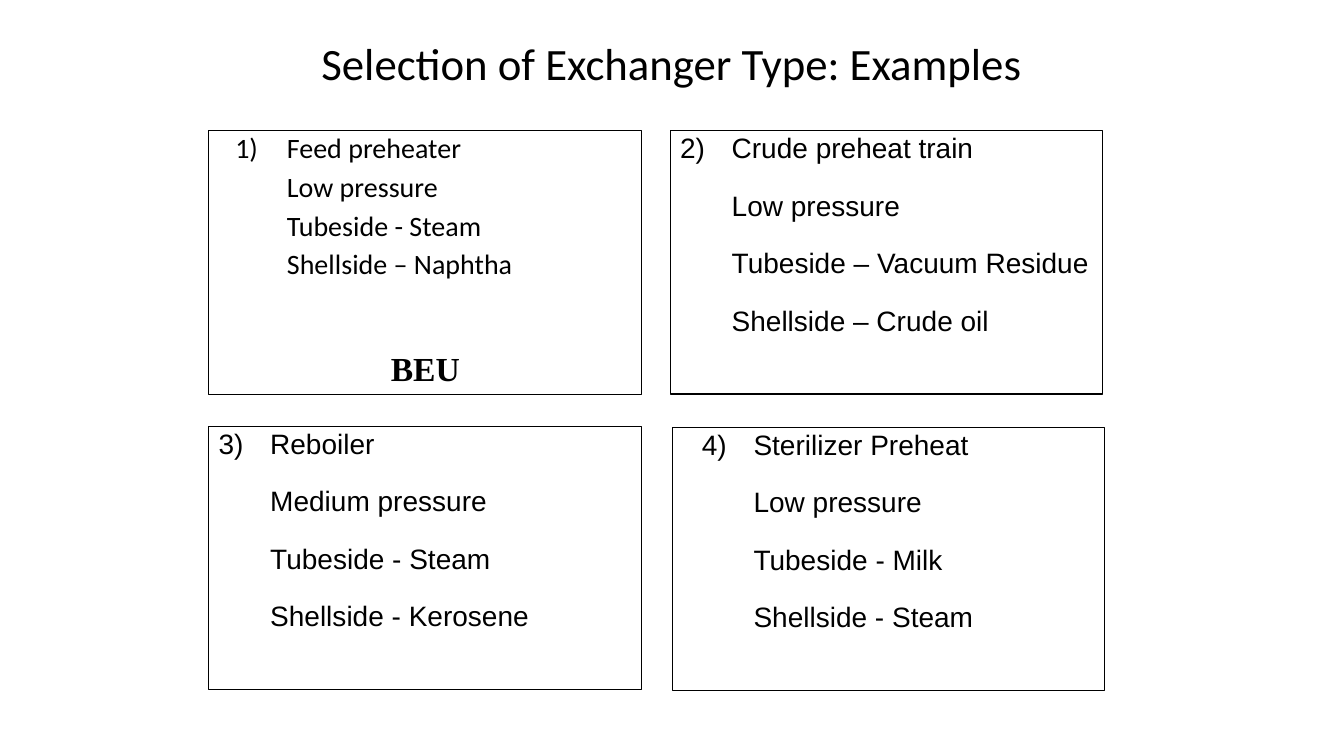
from lxml import etree
from pptx import Presentation
from pptx.dml.color import RGBColor
from pptx.enum.shapes import MSO_SHAPE
from pptx.enum.text import MSO_ANCHOR, MSO_AUTO_SIZE, PP_ALIGN
from pptx.oxml.ns import qn
from pptx.util import Cm, Pt

RECTANGLE = MSO_SHAPE.RECTANGLE
TOP = MSO_ANCHOR.TOP
NO_FIT = MSO_AUTO_SIZE.NONE
GROW = MSO_AUTO_SIZE.SHAPE_TO_FIT_TEXT
LEFT, CENTER = PP_ALIGN.LEFT, PP_ALIGN.CENTER

BLACK, WHITE = "000000", "FFFFFF"
CARD_WIDTH, CARD_HEIGHT = 10.9, 6.63
HANGING = 1.3
TITLE_FONT = {"name": "Calibri", "size": Pt(32), "bold": False}
ANSWER_FONT = {"name": "Times New Roman", "size": Pt(24), "bold": True}
CALIBRI_TEXT = {"name": "Calibri", "size": Pt(20), "bold": False}
ARIAL_TEXT = {"name": "Arial", "size": Pt(20), "bold": False}

FEED_PREHEATER = {
    "box": (5.26, 3.3, CARD_WIDTH, CARD_HEIGHT),
    "lines": ["1)\tFeed preheater", "\tLow pressure",
              "\tTubeside - Steam", "\tShellside – Naphtha"],
    "font": CALIBRI_TEXT, "gap": 3.6, "shift": 0.42,
}
ARIAL_CARDS = [
    {"box": (16.94, 10.77, CARD_WIDTH, CARD_HEIGHT),
     "lines": ["4)\tSterilizer Preheat", "\tLow pressure",
               "\tTubeside - Milk", "\tShellside - Steam"],
     "font": ARIAL_TEXT, "gap": 17, "shift": 0.5},
    {"box": (5.26, 10.74, CARD_WIDTH, CARD_HEIGHT),
     "lines": ["3)\tReboiler", "\tMedium pressure",
               "\tTubeside - Steam", "\tShellside - Kerosene"],
     "font": ARIAL_TEXT, "gap": 17, "shift": 0},
    {"box": (16.89, 3.3, CARD_WIDTH, CARD_HEIGHT),
     "lines": ["2)\tCrude preheat train", "\tLow pressure",
               "\tTubeside – Vacuum Residue", "\tShellside – Crude oil"],
     "font": ARIAL_TEXT, "gap": 17, "shift": 0},
]
ANSWER_SPACES = [(18.34, 8.81), (6.43, 16.15), (18.06, 16.23)]


def color(value):
    return RGBColor.from_string(value)


def apply(target, values):
    for name, value in values.items():
        setattr(target, name, value)


def place(shape, box):
    names = ("left", "top", "width", "height")
    apply(shape, {name: Cm(length) for name, length in zip(names, box)})


def write(para, text, font):
    span = para.add_run()
    span.text = text
    apply(span.font, font)
    span.font.color.rgb = color(BLACK)


def add_rectangle(page, box):
    shape = page.shapes.add_shape(RECTANGLE, *map(Cm, box))
    shape.shadow.inherit = False
    return shape


def fill_title(title, box):
    place(title, box)
    frame = title.text_frame
    apply(frame, {"vertical_anchor": TOP, "auto_size": NO_FIT, "word_wrap": True})
    frame.paragraphs[0].alignment = CENTER
    write(frame.paragraphs[0], "Selection of Exchanger Type: Examples", TITLE_FONT)


def fill_card(shape, card):
    place(shape, card["box"])
    shape.fill.background()
    shape.line.color.rgb = color(BLACK)
    shape.line.width = Pt(0.75)
    frame = shape.text_frame
    apply(frame, {
        "vertical_anchor": TOP, "auto_size": NO_FIT, "word_wrap": True,
        "margin_left": Cm(0.25), "margin_right": Cm(0.25),
        "margin_top": 0, "margin_bottom": 0,
    })
    for index, line in enumerate(card["lines"]):
        para = frame.add_paragraph() if index else frame.paragraphs[0]
        apply(para, {"alignment": LEFT, "space_after": Pt(0),
                     "space_before": Pt(card["gap"] if index else 0)})
        properties = para._p.get_or_add_pPr()
        properties.set("marL", str(Cm(HANGING + card["shift"])))
        properties.set("indent", str(-Cm(HANGING)))
        etree.SubElement(properties, qn("a:buNone"))
        write(para, line, card["font"])


def add_answer(page, box):
    frame = page.shapes.add_textbox(*map(Cm, box)).text_frame
    apply(frame, {"word_wrap": False, "auto_size": GROW})
    write(frame.paragraphs[0], "BEU", ANSWER_FONT)


def add_answer_space(page, box):
    space = add_rectangle(page, box)
    space.fill.solid()
    space.fill.fore_color.rgb = color(WHITE)
    space.line.fill.background()


def build_examples(page):
    title, body = page.placeholders
    fill_title(title, (1.69, 0.76, 30.48, 3.18))
    fill_card(body, FEED_PREHEATER)
    for card in ARIAL_CARDS:
        fill_card(add_rectangle(page, card["box"]), card)
    add_answer(page, (9.6, 8.64, 2.26, 1.27))
    for left, top in ANSWER_SPACES:
        add_answer_space(page, (left, top, 8.56, 1.02))


def main():
    deck = Presentation()
    apply(deck, {"slide_width": Cm(33.87), "slide_height": Cm(19.05)})
    build_examples(deck.slides.add_slide(deck.slide_layouts[1]))
    deck.save("out.pptx")


if __name__ == "__main__":
    main()
